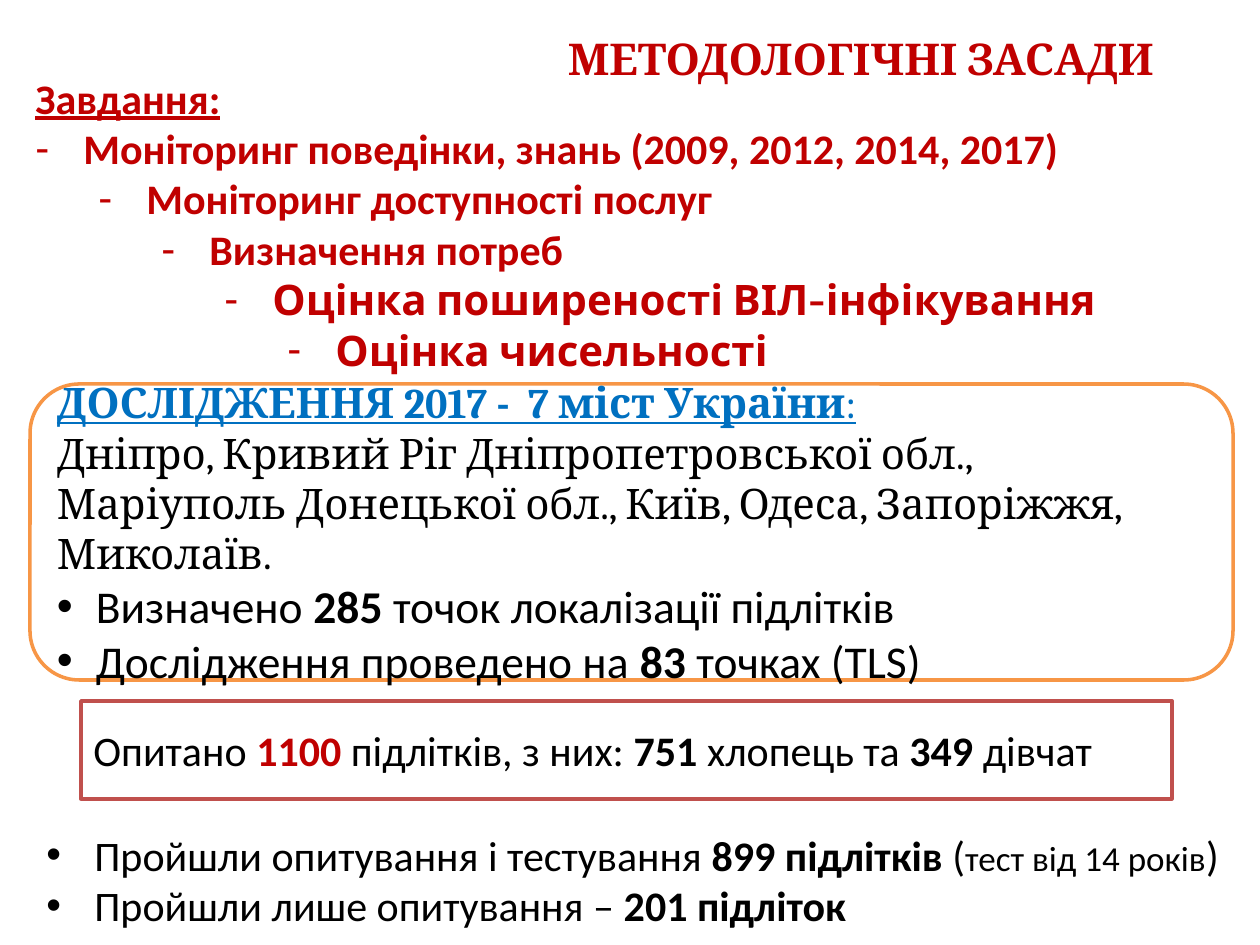
from dataclasses import dataclass, field
from typing import Any

import pptx
import pptx.dml.color
import pptx.enum.shapes
import pptx.enum.text
import pptx.oxml.ns
import pptx.util
from lxml import etree

PX_PER_INCH = 126
EMU_PER_PX = 914400 / PX_PER_INCH
SHAPE = pptx.enum.shapes.MSO_SHAPE
ANCHOR = pptx.enum.text.MSO_ANCHOR
ALIGN = pptx.enum.text.PP_ALIGN
AUTOFIT = pptx.enum.text.MSO_AUTO_SIZE


@dataclass(frozen=True)
class Theme:
    red: str = "C00000"
    blue: str = "0070C0"
    black: str = "000000"
    white: str = "FFFFFF"
    orange: str = "F79646"
    brick: str = "C0504D"
    body: int = 24
    title: int = 25
    bullet: int = 26
    note: int = 20
    line: int = 2
    sans: str = "Calibri"
    serif: str = "Cambria"
    accent: str = "Cabin"


T = Theme()


@dataclass(frozen=True)
class Run:
    text: str
    bold: bool = False
    color: str = T.black
    size: int = T.body
    name: str = T.sans
    underline: bool = False


@dataclass(frozen=True)
class Para:
    runs: list[Run]
    level: int = 0
    left: int = 0
    hang: int = 0
    bullet: str = ""
    align: Any = ALIGN.LEFT


@dataclass(frozen=True)
class Box:
    x: int
    y: int
    w: int
    h: int
    paras: list[Para]
    shape: Any = None
    fill: str = ""
    line: str = ""
    frame: dict[str, Any] = field(default_factory=dict)


def emu(px: int) -> int:
    return round(px * EMU_PER_PX)


def rgb(value: str) -> pptx.dml.color.RGBColor:
    return pptx.dml.color.RGBColor.from_string(value)


def apply(target: Any, values: dict[str, Any]) -> None:
    for key, value in values.items():
        setattr(target, key, value)


def add_run(p: Any, run: Run) -> None:
    r = p.add_run()
    r.text = run.text
    apply(r.font, {"size": pptx.util.Pt(run.size), "name": run.name,
                   "bold": run.bold, "underline": run.underline})
    r.font.color.rgb = rgb(run.color)


def add_para(p: Any, para: Para) -> None:
    apply(p, {"alignment": para.align, "level": para.level})
    ppr = p._p.get_or_add_pPr()
    ppr.set("marL", str(emu(para.left)))
    ppr.set("indent", str(-emu(para.hang)))
    if para.bullet:
        qn = pptx.oxml.ns.qn
        etree.SubElement(ppr, qn("a:buFont")).set("typeface", "Arial")
        etree.SubElement(ppr, qn("a:buChar")).set("char", para.bullet)
    for run in para.runs:
        add_run(p, run)


def add_box(s: Any, box: Box) -> None:
    place = [emu(v) for v in (box.x, box.y, box.w, box.h)]
    if box.shape is None:
        sp = s.shapes.add_textbox(*place)
    else:
        sp = s.shapes.add_shape(box.shape, *place)
        sp.shadow.inherit = False
        if box.fill:
            sp.fill.solid()
            sp.fill.fore_color.rgb = rgb(box.fill)
        else:
            sp.fill.background()
        if box.line:
            sp.line.color.rgb = rgb(box.line)
            sp.line.width = pptx.util.Pt(T.line)
        else:
            sp.line.fill.background()
    tf = sp.text_frame
    apply(tf, {"word_wrap": True, "vertical_anchor": ANCHOR.MIDDLE, **box.frame})
    for i, para in enumerate(box.paras):
        add_para(tf.add_paragraph() if i else tf.paragraphs[0], para)


def bulleted(runs: list[Run], hang: int) -> Para:
    return Para(runs, left=hang, hang=hang, bullet="•")


def task(level: int, text: str, name: str) -> Para:
    return Para([Run(text, True, T.red, name=name)], level=level,
                left=48 + 63 * (level - 1), hang=48, bullet="-")


TASKS = [
    ("Моніторинг поведінки, знань (2009, 2012, 2014, 2017)", T.sans),
    ("Моніторинг доступності послуг", T.sans),
    ("Визначення потреб", T.sans),
    ("Оцінка поширеності ВІЛ-інфікування", T.accent),
    ("Оцінка чисельності", T.accent),
]

BOXES = [
    Box(16, 26, 1150, 73,
        [Para([Run("МЕТОДОЛОГІЧНІ ЗАСАДИ", True, T.red, T.title, T.serif)],
              align=ALIGN.RIGHT)],
        SHAPE.RECTANGLE, fill=T.white, frame={"vertical_anchor": ANCHOR.TOP}),
    Box(81, 701, 1091, 98,
        [Para([Run("Опитано "), Run("1100", True, T.red),
               Run(" підлітків, з них: "), Run("751", True),
               Run(" хлопець та "), Run("349", True), Run(" дівчат")])],
        SHAPE.RECTANGLE, line=T.brick),
    Box(34, 815, 1230, 129,
        [bulleted([Run("Пройшли опитування і тестування "),
                   Run("899 підлітків ", True), Run("("),
                   Run("тест від 14 років", size=T.note), Run(")")], 48),
         bulleted([Run("Пройшли лише опитування – "),
                   Run("201 підліток", True)], 48)]),
    Box(30, 384, 1203, 296,
        [Para([Run("ДОСЛІДЖЕННЯ 2017 -  7 міст України", True, T.blue,
                   name=T.serif, underline=True),
               Run(":", color=T.blue, name=T.serif, underline=True)]),
         Para([Run("Дніпро, Кривий Ріг Дніпропетровської обл., Маріуполь "
                   "Донецької обл., Київ, Одеса, Запоріжжя, Миколаїв.",
                   name=T.serif)]),
         bulleted([Run("Визначено ", size=T.bullet),
                   Run("285 ", True, size=T.bullet),
                   Run("точок локалізації підлітків", size=T.bullet)], 39),
         bulleted([Run("Дослідження проведено на ", size=T.bullet),
                   Run("83 ", True, size=T.bullet),
                   Run("точках (TLS)", size=T.bullet)], 39)],
        SHAPE.ROUNDED_RECTANGLE, fill=T.white, line=T.orange),
    Box(23, 66, 1218, 318,
        [Para([Run("Завдання:", True, T.red, underline=True)],
              level=1, left=24, hang=24),
         *(task(i, text, name) for i, (text, name) in enumerate(TASKS, 1))],
        frame={"vertical_anchor": ANCHOR.TOP,
               "auto_size": AUTOFIT.SHAPE_TO_FIT_TEXT}),
]


def main() -> None:
    prs = pptx.Presentation()
    apply(prs, {"slide_width": emu(1260), "slide_height": emu(945)})
    s = prs.slides.add_slide(prs.slide_layouts[6])
    for box in BOXES:
        add_box(s, box)
    prs.save("out.pptx")


if __name__ == "__main__":
    main()
